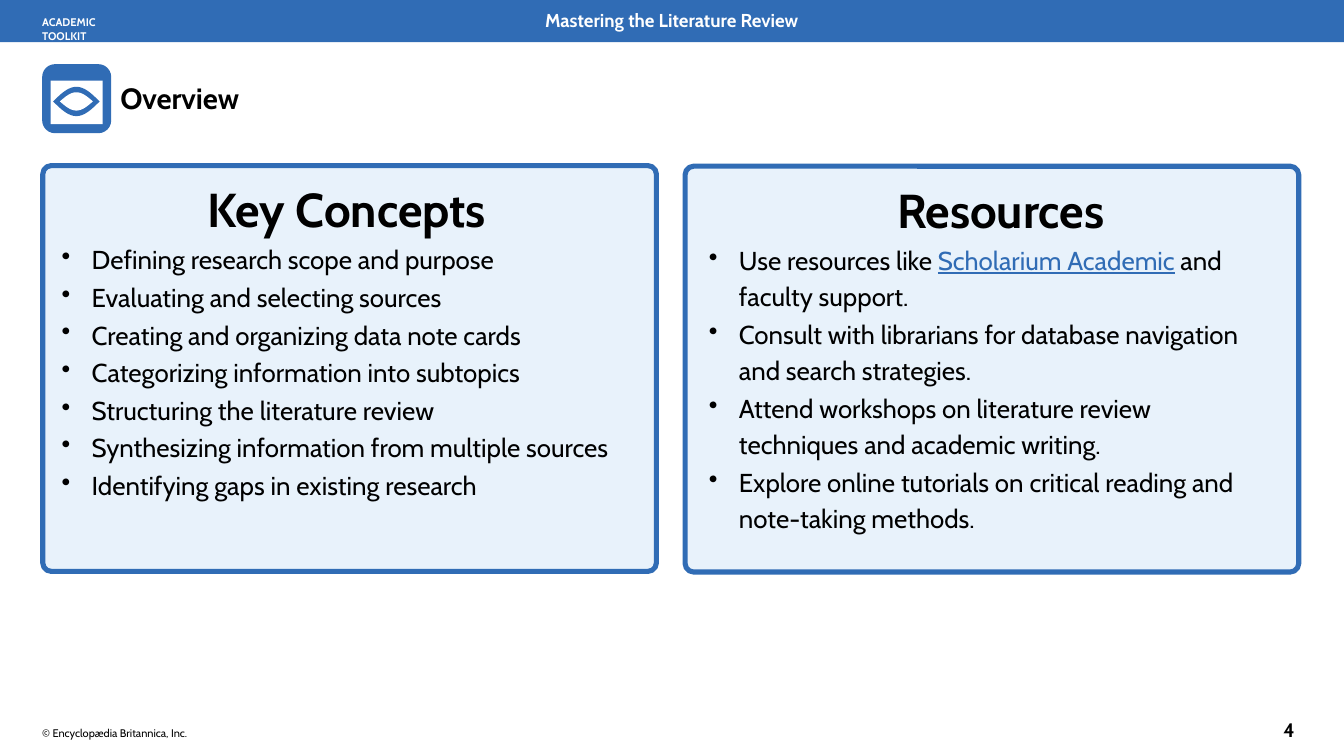
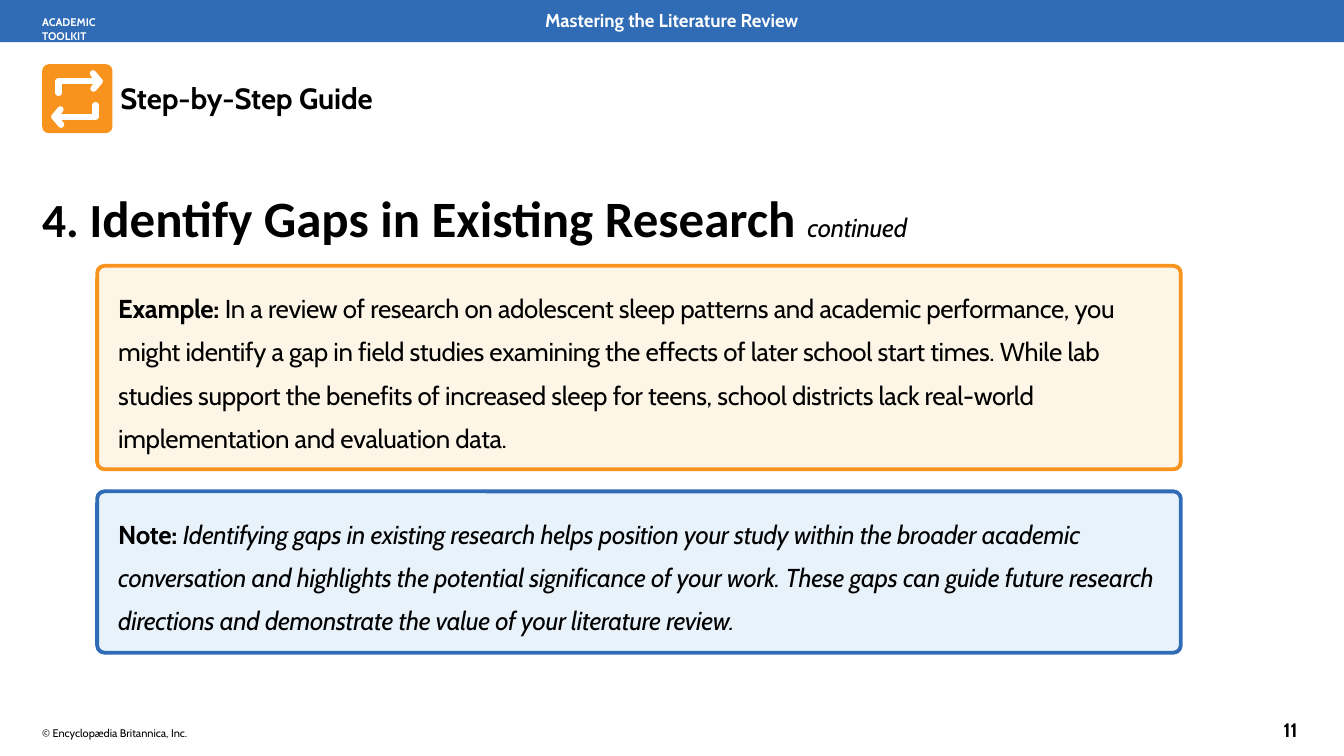
from math import pi, sin

from lxml.etree import SubElement
from pptx import Presentation
from pptx.dml.color import RGBColor
from pptx.enum.shapes import MSO_SHAPE as Shape
from pptx.enum.text import MSO_ANCHOR as Anchor, PP_ALIGN as Align
from pptx.oxml.ns import qn
from pptx.util import Inches, Pt

# Shared look
BLUE = RGBColor(0x30, 0x6C, 0xB5)
PALE_BLUE = RGBColor(0xE8, 0xF2, 0xFB)
ORANGE = RGBColor(0xF8, 0x94, 0x1D)
CREAM = RGBColor(0xFD, 0xF5, 0xE6)
WHITE = RGBColor(0xFF, 0xFF, 0xFF)
BLACK = RGBColor(0, 0, 0)
FONT = "Cabin"
WIDTH, HEIGHT = 21.99, 12.37
MARGIN = 0.69
BODY_SIZE = 30.5

# Content
HEADER = "Mastering the Literature Review"
SERIES = "ACADEMIC TOOLKIT"
COPYRIGHT = "© Encyclopædia Britannica, Inc."

OVERVIEW_CARDS = [
    dict(left=0.7, top=2.71, inset=0.25, title_indent=0.08, title="Key Concepts", bullets=[
        "Defining research scope and purpose",
        "Evaluating and selecting sources",
        "Creating and organizing data note cards",
        "Categorizing information into subtopics",
        "Structuring the literature review",
        "Synthesizing information from multiple sources",
        "Identifying gaps in existing research",
    ]),
    dict(left=11.21, top=2.72, inset=0.33, title_indent=0.38, title="Resources", bullets=[
        ["Use resources like ",
         ("Scholarium Academic", dict(color=BLUE, underline=True)),
         " and faculty support."],
        "Consult with librarians for database navigation and search strategies.",
        "Attend workshops on literature review techniques and academic writing.",
        "Explore online tutorials on critical reading and note-taking methods.",
    ]),
]

STEP_TITLE = [
    ("4. I", dict(size=56)),
    "dentify Gaps in Existing Research ",
    ("continued", dict(size=BODY_SIZE, font=FONT, bold=False, italic=True, spacing=-0.3)),
]

GUIDE_CARDS = [
    dict(top=4.35, height=3.33, fill=CREAM, line=ORANGE, label="Example: ", italic=False,
         text="In a review of research on adolescent sleep patterns and academic performance, "
              "you might identify a gap in field studies examining the effects of later school "
              "start times. While lab studies support the benefits of increased sleep for teens, "
              "school districts lack real-world implementation and evaluation data."),
    dict(top=8.04, height=2.64, fill=PALE_BLUE, line=BLUE, label="Note: ", italic=True,
         text="Identifying gaps in existing research helps position your study within the "
              "broader academic conversation and highlights the potential significance of your "
              "work. These gaps can guide future research directions and demonstrate the value "
              "of your literature review."),
]


def add_para(frame, runs, align=Align.LEFT, line_spacing=None, before=0,
             indent=0, bullet=False, **style):
    """Add a paragraph; runs is a string or a list of strings and (text, style) pairs."""
    para = frame.paragraphs[0]
    if para.runs:
        para = frame.add_paragraph()
    properties = para._p.get_or_add_pPr()
    properties.set("marL", str(Inches(indent)))
    if bullet:
        properties.set("indent", str(-Inches(0.49)))
        SubElement(properties, qn("a:buChar")).set("char", "•")
    para.alignment = align
    para.space_before = Pt(before)
    if line_spacing:
        para.line_spacing = line_spacing
    for item in [runs] if isinstance(runs, str) else runs:
        text, changes = (item, {}) if isinstance(item, str) else item
        look = dict(size=BODY_SIZE, font=FONT, color=BLACK, bold=False, italic=False,
                    underline=False, spacing=0) | style | changes
        span = para.add_run()
        span.text = text
        span.font.size = Pt(look["size"])
        span.font.name = look["font"]
        span.font.color.rgb = look["color"]
        span.font.bold = look["bold"]
        span.font.italic = look["italic"]
        span.font.underline = look["underline"]
        span._r.get_or_add_rPr().set("spc", str(round(look["spacing"] * 100)))


def set_frame(frame, left=0, top=0, right=0):
    frame.word_wrap = True
    frame.vertical_anchor = Anchor.TOP
    frame.margin_left, frame.margin_top = Inches(left), Inches(top)
    frame.margin_right, frame.margin_bottom = Inches(right), 0
    return frame


def add_box(slide, left, top, width, height, inset=0.02):
    box = slide.shapes.add_textbox(Inches(left), Inches(top), Inches(width), Inches(height))
    return set_frame(box.text_frame, top=inset)


def paint(shape, fill=None, line=None, weight=0):
    shape.shadow.inherit = False
    if fill is None:
        shape.fill.background()
    else:
        shape.fill.solid()
        shape.fill.fore_color.rgb = fill
    if line is None:
        shape.line.fill.background()
    else:
        shape.line.color.rgb = line
        shape.line.width = Pt(weight)
    return shape


def add_block(slide, left, top, width, height, radius=0, **colors):
    kind = Shape.ROUNDED_RECTANGLE if radius else Shape.RECTANGLE
    block = slide.shapes.add_shape(kind, Inches(left), Inches(top), Inches(width), Inches(height))
    if radius:
        block.adjustments[0] = radius / min(width, height)
    return paint(block, **colors)


def add_outline(slide, points, close, **colors):
    corners = [(Inches(x), Inches(y)) for x, y in points]
    builder = slide.shapes.build_freeform(*corners[0])
    builder.add_line_segments(corners[1:], close=close)
    return paint(builder.convert_to_shape(), **colors)


def draw_eye_icon(slide):
    add_block(slide, MARGIN, 1.05, 1.13, 1.13, radius=0.21, fill=BLUE)
    add_block(slide, 0.83, 1.32, 0.85, 0.71, fill=WHITE)
    center_x, center_y, steps = 1.25, 1.66, 16
    for half_width, half_height, color in [(0.38, 0.24, BLUE), (0.27, 0.15, WHITE)]:
        lids = [(center_x + half_width * (2 * i / steps - 1), half_height * sin(pi * i / steps))
                for i in range(steps + 1)]
        upper = [(x, center_y - rise) for x, rise in lids]
        lower = [(x, center_y + rise) for x, rise in lids[-2:0:-1]]
        add_outline(slide, upper + lower, True, fill=color)


def draw_loop_icon(slide):
    add_block(slide, MARGIN, 1.05, 1.15, 1.13, radius=0.11, fill=ORANGE)
    center_x, center_y = 1.26, 1.62
    shaft = [(-0.3, -0.1), (-0.3, -0.29), (0.37, -0.29)]
    head = [(0.26, -0.42), (0.37, -0.29), (0.27, -0.17)]
    for turn in (1, -1):
        for stroke in (shaft, head):
            points = [(center_x + turn * x, center_y + turn * y) for x, y in stroke]
            arrow = add_outline(slide, points, False, line=WHITE, weight=7.5)
            line = arrow.line._get_or_add_ln()
            line.set("cap", "rnd")
            SubElement(line, qn("a:round"))


def add_page(deck, section, number, draw_icon):
    page = deck.slides.add_slide(deck.slide_layouts[6])
    # Header band
    add_block(page, 0, 0, WIDTH, 0.69, fill=BLUE)
    add_para(add_box(page, 7.74, 0.13, 6.5, 0.39), HEADER,
             align=Align.CENTER, size=22, color=WHITE, bold=True)
    add_para(add_box(page, MARGIN, 0.24, 1.4, 0.45), SERIES, size=13, color=WHITE, bold=True)
    # Section name
    draw_icon(page)
    add_para(add_box(page, 1.97, 1.3, 6, 0.61), section, size=34.5, bold=True, spacing=-0.1)
    # Footer
    add_para(add_box(page, 21, 11.72, 0.5, 0.41), str(number), size=23, bold=True, spacing=-0.2)
    add_para(add_box(page, MARGIN, 11.86, 3, 0.25), COPYRIGHT, size=13)
    return page


def build_overview(deck):
    page = add_page(deck, "Overview", 4, draw_eye_icon)
    for card in OVERVIEW_CARDS:
        block = add_block(page, card["left"], card["top"], 10.04, 6.64, radius=0.14,
                          fill=PALE_BLUE, line=BLUE, weight=6)
        frame = set_frame(block.text_frame, left=card["inset"], top=0.2, right=0.42)
        add_para(frame, card["title"], align=Align.CENTER, indent=card["title_indent"],
                 size=56, bold=True, spacing=-0.1)
        for bullet in card["bullets"]:
            add_para(frame, bullet, bullet=True, indent=0.51, line_spacing=1.17, before=1.5)


def build_guide(deck):
    page = add_page(deck, "Step-by-Step Guide", 11, draw_loop_icon)
    add_para(add_box(page, MARGIN, 3.08, 19.99, 0.98, inset=0.08), STEP_TITLE,
             line_spacing=Pt(64.3), size=60, font="Calibri", bold=True)
    for card in GUIDE_CARDS:
        block = add_block(page, 1.59, card["top"], 17.73, card["height"], radius=0.12,
                          fill=card["fill"], line=card["line"], weight=4.5)
        frame = set_frame(block.text_frame, left=0.31, top=0.2, right=0.22)
        add_para(frame, [(card["label"], dict(bold=True)),
                         (card["text"], dict(italic=card["italic"]))],
                 line_spacing=1.4, spacing=-0.4)


def main():
    deck = Presentation()
    deck.slide_width, deck.slide_height = Inches(WIDTH), Inches(HEIGHT)
    build_overview(deck)
    build_guide(deck)
    deck.save("out.pptx")


if __name__ == "__main__":
    main()
